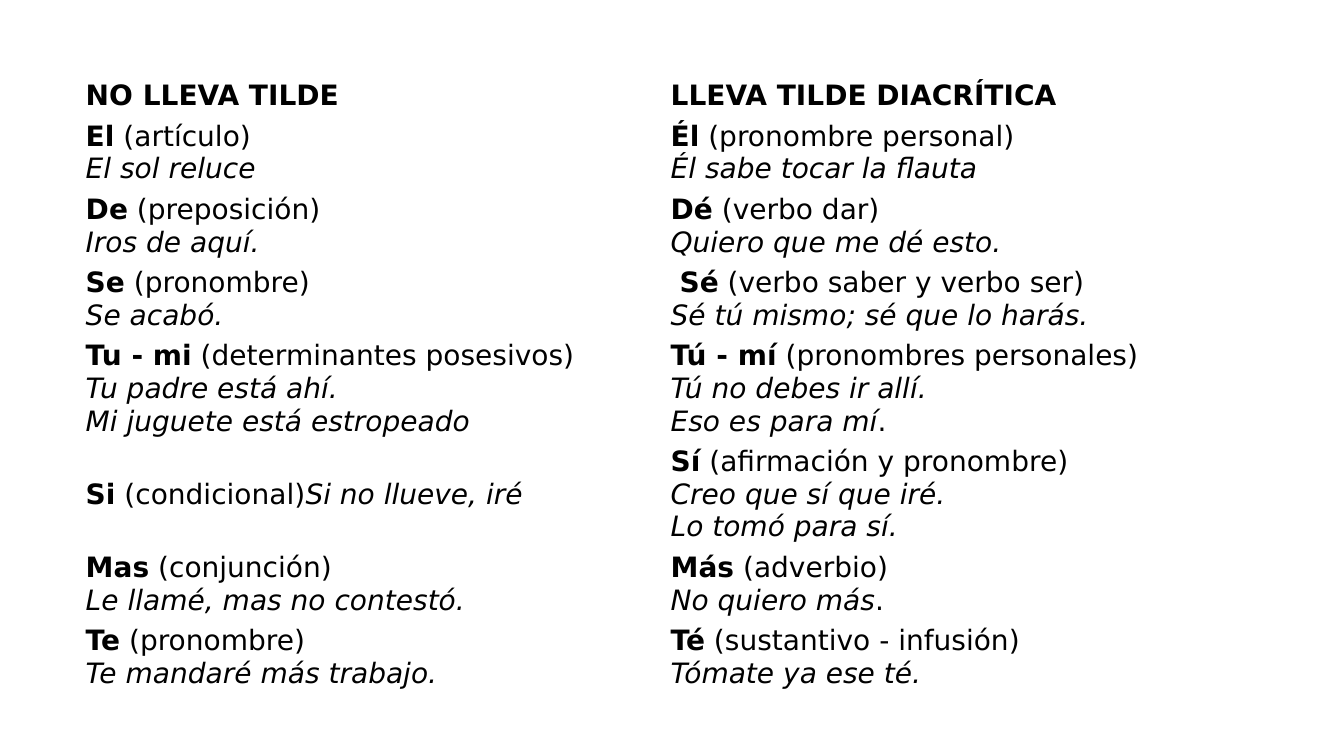
"""Build a slide that contrasts Spanish words with and without the diacritic accent."""
from dataclasses import dataclass

from pptx import Presentation
from pptx.dml.color import RGBColor
from pptx.enum.text import MSO_ANCHOR
from pptx.util import Inches, Pt

WIDE, HIGH = Inches(13.33), Inches(7.5)
LEFT, TOP = 0.0578, 0.1
COL = 0.4352
ROWS = (0.38, 0.67, 0.67, 0.67, 0.96, 0.96, 0.67, 0.67)
FONT, SIZE = "DejaVu Sans", Pt(20)
INKS = {"text": "000000"}


@dataclass(frozen=True)
class Entry:
    word: str
    note: str = ""
    lines: tuple[str, ...] = ()
    stop: str = ""
    split: bool = True
    lead: str = ""


PAIRS = (
    (Entry("NO LLEVA TILDE"), Entry("LLEVA TILDE DIACRÍTICA")),
    (Entry("El", " (artículo)", ("El sol reluce",)),
     Entry("Él", " (pronombre personal)", ("Él sabe tocar la flauta",))),
    (Entry("De", " (preposición)", ("Iros de aquí.",)),
     Entry("Dé", " (verbo dar)", ("Quiero que me dé esto.",))),
    (Entry("Se", " (pronombre)", ("Se acabó.",)),
     Entry("Sé", " (verbo saber y verbo ser)", ("Sé tú mismo; sé que lo harás.",), lead=" ")),
    (Entry("Tu - mi", " (determinantes posesivos)",
           ("Tu padre está ahí.", "Mi juguete está estropeado")),
     Entry("Tú - mí", " (pronombres personales)",
           ("Tú no debes ir allí.", "Eso es para mí"), stop=".")),
    (Entry("Si", " (condicional)", ("Si no llueve, iré",), split=False),
     Entry("Sí", " (afirmación y pronombre)", ("Creo que sí que iré.", "Lo tomó para sí."))),
    (Entry("Mas", " (conjunción)", ("Le llamé, mas no contestó.",)),
     Entry("Más", " (adverbio)", ("No quiero más",), stop=".")),
    (Entry("Te", " (pronombre)", ("Te mandaré más trabajo.",)),
     Entry("Té", " (sustantivo - infusión)", ("Tómate ya ese té.",))),
)


def add_text(para, text: str, bold: bool = False, slant: bool = False) -> None:
    """Append one styled run, if there is any text."""
    if not text:
        return
    run = para.add_run()
    run.text = text
    font = run.font
    font.name, font.size = FONT, SIZE
    font.bold, font.italic = bold, slant
    font.color.rgb = RGBColor.from_string(INKS["text"])


def fill_cell(cell, entry: Entry) -> None:
    """Write an entry into a clear table cell."""
    cell.fill.background()
    cell.vertical_anchor = MSO_ANCHOR.MIDDLE
    cell.margin_left = cell.margin_right = Inches(0.08)
    cell.margin_top = cell.margin_bottom = Inches(0.04)
    para = cell.text_frame.paragraphs[0]
    add_text(para, entry.lead)
    add_text(para, entry.word, bold=True)
    add_text(para, entry.note)
    for spot, line in enumerate(entry.lines):
        if spot or entry.split:
            para.add_line_break()
        add_text(para, line, slant=True)
    add_text(para, entry.stop)


def main() -> None:
    """Draw the table and save the deck."""
    deck = Presentation()
    deck.slide_width, deck.slide_height = WIDE, HIGH
    slide = deck.slides.add_slide(deck.slide_layouts[6])
    width = int(WIDE * COL)
    frame = slide.shapes.add_table(
        len(PAIRS), 2, int(WIDE * LEFT), int(HIGH * TOP), 2 * width, Inches(sum(ROWS)))
    table = frame.table
    table.first_row = table.horz_banding = False
    for col in table.columns:
        col.width = width
    for row, high, pair in zip(table.rows, ROWS, PAIRS):
        row.height = Inches(high)
        for cell, entry in zip(row.cells, pair):
            fill_cell(cell, entry)
    deck.save("out.pptx")


if __name__ == "__main__":
    main()
